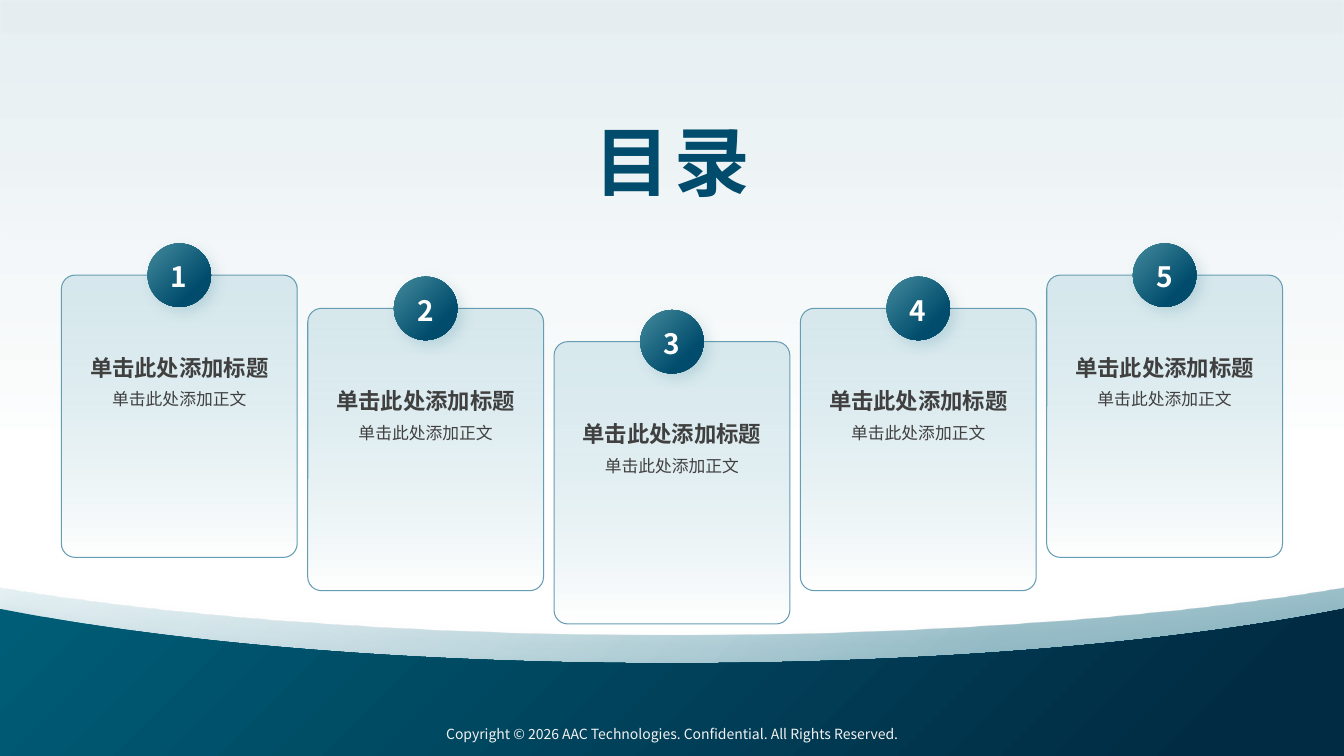
from dataclasses import dataclass

from lxml import etree
from pptx import Presentation
from pptx import util as u
from pptx.dml.color import RGBColor
from pptx.enum import shapes, text
from pptx.oxml.ns import qn


@dataclass(frozen=True)
class Theme:
    font: str = "Noto Sans CJK SC"
    ink: str = "404040"
    heading: str = "014C6C"
    white: str = "FFFFFF"
    footer: str = "F2F2F2"
    outline: str = "669DB3"
    shade: str = "005D77"
    sky: tuple = ((0, "005D77", 10), (58, "005D77", 0))
    pale_wave: tuple = ((0, "85BCCA", 20), (71, "005D77", 38))
    deep_wave: tuple = ((0, "005D77", 100), (91, "012B43", 100))
    card: tuple = ((0, "B4D6DF", 45), (100, "FFFFFF", 100))
    badge: tuple = ((0, "438A9C", 100), (74, "014C6C", 100))
    title_size: int = 54
    number_size: int = 20
    heading_size: int = 16
    body_size: int = 12
    footer_size: int = 10


THEME = Theme()
WIDTH, HEIGHT = 13.34, 7.5
MARGIN = 0.61
CARD_WIDTH, CARD_HEIGHT = 2.34, 2.8
CARD_COUNT = 5
PITCH = (WIDTH - 2 * MARGIN - CARD_WIDTH) / (CARD_COUNT - 1)
FIRST_ROW, ROW_STEP = 2.73, 0.33
BADGE = 0.63


def inches(*lengths):
    return [u.Inches(length) for length in lengths]


def apply(target, values):
    for name, value in values.items():
        setattr(target, name, value)


def set_opacity(color_element, percent):
    if percent < 100:
        etree.SubElement(color_element, qn("a:alpha"), val=str(percent * 1000))


def paint(shape, stops, angle):
    shape.shadow.inherit = False
    shape.line.fill.background()
    shape.fill.gradient()
    shape.fill.gradient_angle = 360 - angle
    for stop, (position, color, _) in zip(shape.fill.gradient_stops, stops):
        stop.position = position / 100
        stop.color.rgb = RGBColor.from_string(color)
    for stop, (_, _, opacity) in zip(shape._element.spPr.iter(qn("a:gs")), stops):
        set_opacity(stop[0], opacity)


def cast_shadow(shape, distance, angle):
    effects = shape._element.spPr.find(qn("a:effectLst"))
    shadow = etree.SubElement(
        effects, qn("a:outerShdw"), blurRad=str(u.Pt(10)), dist=str(u.Pt(distance)),
        dir=str(angle * 60000), algn="ctr", rotWithShape="0")
    set_opacity(etree.SubElement(shadow, qn("a:srgbClr"), val=THEME.shade), 15)


def write(paragraph, wording, size, color, bold=False, tracking=0, **spacing):
    apply(paragraph, {"alignment": text.PP_ALIGN.CENTER, **spacing})
    run = paragraph.add_run()
    run.text = wording
    apply(run.font, {"name": THEME.font, "size": u.Pt(size), "bold": bold})
    run.font.color.rgb = RGBColor.from_string(color)
    properties = run._r.get_or_add_rPr()
    etree.SubElement(properties, qn("a:ea"), typeface=THEME.font)
    if tracking:
        properties.set("spc", str(tracking * 100))


def add_sky(slide):
    sky = slide.shapes.add_shape(shapes.MSO_SHAPE.RECTANGLE, *inches(0, 0, WIDTH, HEIGHT))
    paint(sky, THEME.sky, 90)


def bend(segments):
    curve = etree.Element(qn("a:cubicBezTo"))
    segments[0].addprevious(curve)
    for segment in segments:
        curve.append(segment[0])
        segment.getparent().remove(segment)


def add_wave(slide, half_edge, base, stops):
    mirrored = [(WIDTH - x, y) for x, y in reversed(half_edge[:-1])]
    outline = [inches(*point)
               for point in half_edge + mirrored + [(WIDTH, base), (0, base)]]
    builder = slide.shapes.build_freeform(*outline[0])
    builder.add_line_segments(outline[1:], close=True)
    wave = builder.convert_to_shape()
    segments = list(wave._element.spPr.iter(qn("a:lnTo")))
    for first in (1, 4):
        bend(segments[first:first + 3])
    paint(wave, stops, 45)
    cast_shadow(wave, 4, 90)


def add_title(slide, wording):
    title = slide.shapes.title
    title._element.getparent().append(title._element)
    left, top, width, height = inches(MARGIN, 0.96, WIDTH - 2 * MARGIN, 1.26)
    apply(title, {"left": left, "top": top, "width": width, "height": height})
    apply(title.text_frame, {"vertical_anchor": text.MSO_ANCHOR.MIDDLE,
                             "auto_size": text.MSO_AUTO_SIZE.NONE})
    write(title.text_frame.paragraphs[0], wording, THEME.title_size, THEME.heading,
          bold=True, tracking=3)


def add_footer(slide, wording):
    frame = slide.shapes.add_textbox(*inches(3.12, 7.15, 7.1, 0.27)).text_frame
    apply(frame, {"word_wrap": True, "auto_size": text.MSO_AUTO_SIZE.SHAPE_TO_FIT_TEXT})
    write(frame.paragraphs[0], wording, THEME.footer_size, THEME.footer)


def add_rounded(group, box, radius, stops, angle):
    shape = group.shapes.add_shape(shapes.MSO_SHAPE.ROUNDED_RECTANGLE, *inches(*box))
    shape.adjustments[0] = radius
    paint(shape, stops, angle)
    return shape


def add_card(slide, index, heading, body):
    left = MARGIN + index * PITCH
    top = FIRST_ROW + ROW_STEP * min(index, CARD_COUNT - 1 - index)
    group = slide.shapes.add_group_shape()

    panel = add_rounded(group, (left, top, CARD_WIDTH, CARD_HEIGHT), 0.058, THEME.card, 90)
    panel.line.color.rgb = RGBColor.from_string(THEME.outline)
    panel.line.width = u.Pt(0.75)

    frame = group.shapes.add_textbox(
        *inches(left + 0.06, top + 0.73, CARD_WIDTH - 0.12, 1.47)).text_frame
    frame.word_wrap = True
    gap = u.Pt(3)
    write(frame.paragraphs[0], heading, THEME.heading_size, THEME.ink, bold=True,
          space_after=gap)
    write(frame.add_paragraph(), body, THEME.body_size, THEME.ink,
          space_before=gap, space_after=gap)

    badge = add_rounded(
        group, (left + (CARD_WIDTH - BADGE) / 2, top - BADGE / 2, BADGE, BADGE),
        0.5, THEME.badge, 45)
    cast_shadow(badge, 5, 45)
    apply(badge.text_frame, {"word_wrap": False, "vertical_anchor": text.MSO_ANCHOR.MIDDLE})
    write(badge.text_frame.paragraphs[0], str(index + 1), THEME.number_size, THEME.white,
          bold=True, line_spacing=1.1)


def main():
    deck = Presentation()
    deck.slide_width, deck.slide_height = inches(WIDTH, HEIGHT)
    slide = deck.slides.add_slide(deck.slide_layouts[5])
    middle = WIDTH / 2
    add_sky(slide)
    add_wave(slide, [(0, 5.83), (0.05, 5.84), (1.75, 6.12), (4.08, 6.3), (middle, 6.3)],
             7.09, THEME.pale_wave)
    add_wave(slide, [(0, 6.04), (0.05, 6.05), (1.75, 6.38), (4.08, 6.58), (middle, 6.58)],
             HEIGHT, THEME.deep_wave)
    add_footer(slide, "Copyright © 2026 AAC Technologies. Confidential. All Rights Reserved.")
    add_title(slide, "目录")
    for index in range(CARD_COUNT):
        add_card(slide, index, "单击此处添加标题", "单击此处添加正文")
    deck.save("out.pptx")


if __name__ == "__main__":
    main()
